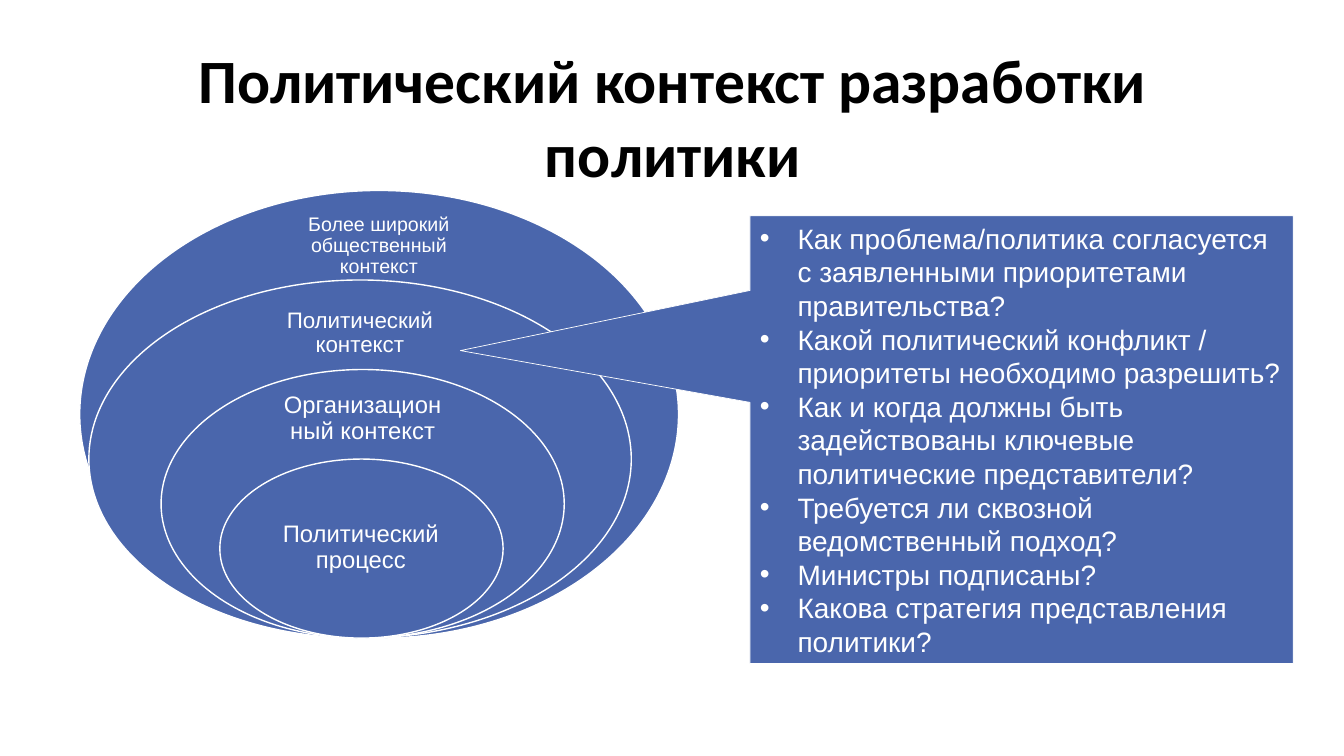
from lxml.etree import SubElement
from pptx import Presentation
from pptx.dml.color import RGBColor
from pptx.enum.shapes import MSO_SHAPE
from pptx.enum.text import MSO_ANCHOR, PP_ALIGN
from pptx.oxml.ns import qn
from pptx.util import Cm, Pt

COLORS = {"blue": "4A66AC", "white": "FFFFFF", "black": "000000"}
CONTEXT_BOTTOM = 16.08
CONTEXT_HEIGHT = 11.28
CONTEXTS = [
    (2.01, 15.09, "Более широкий общественный контекст", 14, (7.44, 5.36, 4.22, 1.7), 0.28),
    (2.24, 13.67, "Политический контекст", 16, (6.68, 7.59, 4.78, 1.63), 0.3),
    (4.06, 10.16, "Организационный контекст", 17, (6.78, 9.8, 4.72, 1.52), 0.33),
    (5.54, 7.14, "Политический процесс", 17, (6.58, 12.67, 5.03, 2.26), 0.33),
]
QUESTIONS = [
    "Как проблема/политика согласуется с заявленными приоритетами правительства?",
    "Какой политический конфликт / приоритеты необходимо разрешить?",
    "Как и когда должны быть задействованы ключевые политические представители?",
    "Требуется ли сквозной ведомственный подход?",
    "Министры подписаны?",
    "Какова стратегия представления политики?",
]


def color(name):
    """Return the named colour."""
    return RGBColor.from_string(COLORS[name])


def add_run(p, text, size, font="Arial", ink="white", bold=False):
    """Add a formatted run to a paragraph."""
    r = p.add_run()
    r.text = text
    r.font.size = Pt(size)
    r.font.name = font
    r.font.bold = bold
    r.font.color.rgb = color(ink)


def add_bullet(p, indent):
    """Give a paragraph a hanging round bullet."""
    pPr = p._p.get_or_add_pPr()
    pPr.set("marL", str(indent))
    pPr.set("indent", str(-indent))
    SubElement(pPr, qn("a:buFont")).set("typeface", "Arial")
    SubElement(pPr, qn("a:buChar")).set("char", "•")


def add_filled_shape(s, kind, box, line_width):
    """Add a blue shape with a white outline."""
    sp = s.shapes.add_shape(kind, *map(Cm, box))
    sp.shadow.inherit = False
    sp.fill.solid()
    sp.fill.fore_color.rgb = color("blue")
    sp.line.color.rgb = color("white")
    sp.line.width = Pt(line_width)
    return sp


def add_text_box(s, box):
    """Add a wrapping text box and return its frame with a centred paragraph."""
    tf = s.shapes.add_textbox(*map(Cm, box)).text_frame
    tf.word_wrap = True
    p = tf.paragraphs[0]
    p.alignment = PP_ALIGN.CENTER
    return tf, p


def add_label(s, text, size, box, inset):
    """Add the caption of one context ellipse."""
    tf, p = add_text_box(s, box)
    tf.vertical_anchor = MSO_ANCHOR.MIDDLE
    tf.margin_left = tf.margin_right = tf.margin_top = tf.margin_bottom = Cm(inset)
    p.line_spacing = 0.9
    add_run(p, text, size)


def add_contexts(s):
    """Add nested ellipses that share one bottom edge."""
    for i, (left, width, text, size, label_box, inset) in enumerate(CONTEXTS):
        height = CONTEXT_HEIGHT * (5 - i) / 5
        box = (left, CONTEXT_BOTTOM - height, width, height)
        add_filled_shape(s, MSO_SHAPE.OVAL, box, 1)
        add_label(s, text, size, label_box, inset)


def add_callout(s):
    """Add the callout with the list of questions."""
    sp = add_filled_shape(s, MSO_SHAPE.RECTANGULAR_CALLOUT, (18.9, 5.44, 13.69, 11.28), 0.5)
    sp.adjustments[0] = -1.033
    sp.adjustments[1] = -0.199
    tf = sp.text_frame
    tf.word_wrap = True
    tf.vertical_anchor = MSO_ANCHOR.MIDDLE
    for i, question in enumerate(QUESTIONS):
        p = tf.add_paragraph() if i else tf.paragraphs[0]
        p.alignment = PP_ALIGN.LEFT
        add_bullet(p, Cm(0.95))
        add_run(p, question, 20)


def add_title(s):
    """Add the slide heading."""
    tf, p = add_text_box(s, (1.96, 0.94, 30, 4.01))
    add_run(p, "Политический контекст разработки политики", 44, "Calibri", "black", True)


def main():
    """Build and save the slide."""
    prs = Presentation()
    prs.slide_width, prs.slide_height = Cm(33.87), Cm(19.05)
    s = prs.slides.add_slide(prs.slide_layouts[6])
    add_contexts(s)
    add_callout(s)
    add_title(s)
    prs.save("out.pptx")


if __name__ == "__main__":
    main()
